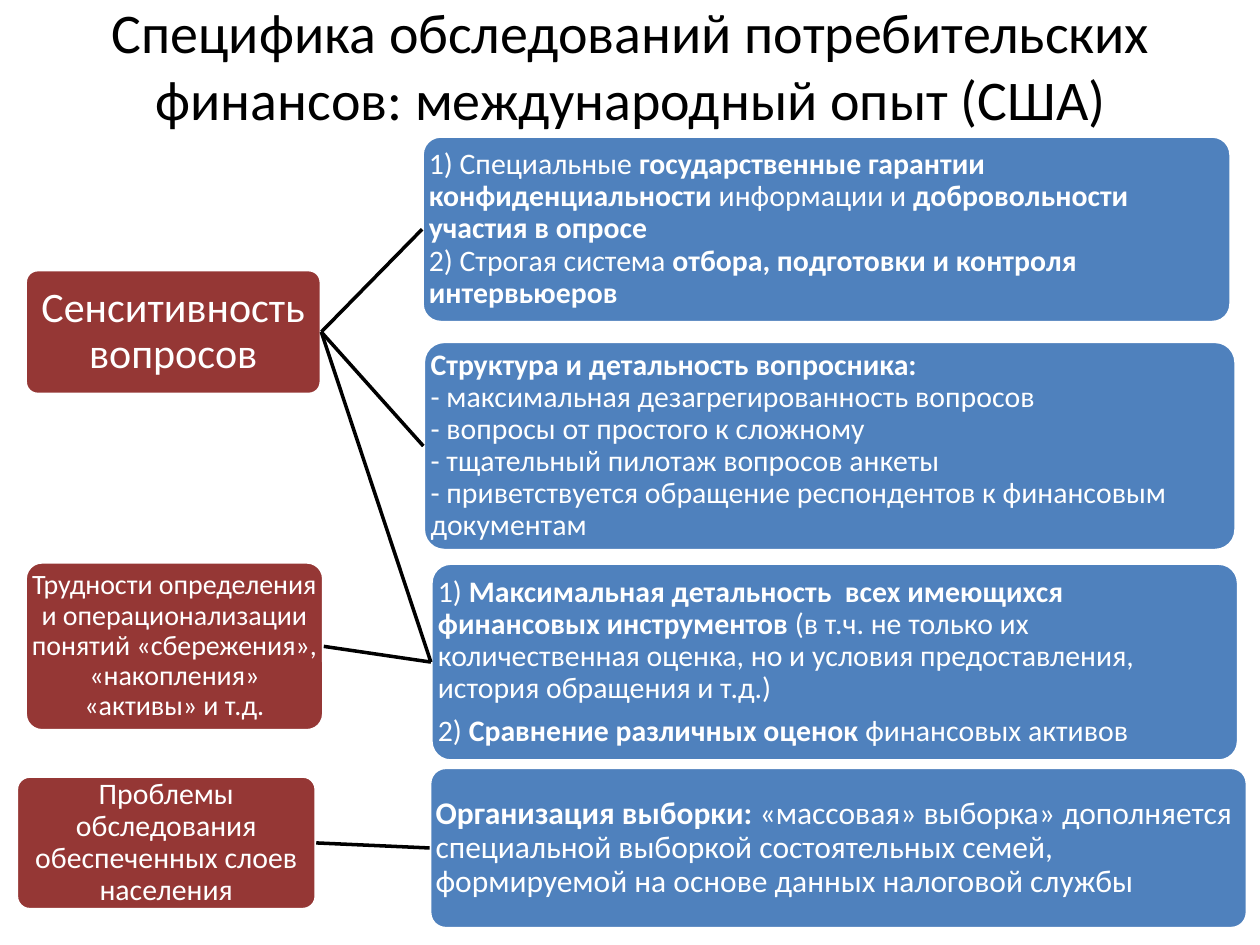
from dataclasses import dataclass

from lxml import etree
from pptx import Presentation
from pptx import util as u
from pptx.dml.color import RGBColor
from pptx.enum import shapes, text
from pptx.oxml import ns

BLACK = RGBColor(0x00, 0x00, 0x00)
WHITE = RGBColor(0xFF, 0xFF, 0xFF)
RED = RGBColor(0x95, 0x37, 0x35)
BLUE = RGBColor(0x4F, 0x81, 0xBD)
RIGHT_SIDE, LEFT_SIDE = 3, 1


@dataclass
class Box:
    left: float
    top: float
    width: float
    height: float
    paragraphs: list[str]
    size: int = 17
    gap: float = 0.35  # space after a paragraph, as a share of the text size
    inset: float = 0.01


ISSUES = [
    Box(0.2, 2.14, 2.35, 0.99, ["Сенситивность вопросов"], size=24, inset=0.02),
    Box(0.2, 4.46, 2.37, 1.34, [
        "Трудности определения и операционализации понятий «сбережения», "
        "«накопления» «активы» и т.д."], size=16),
    Box(0.13, 6.16, 2.38, 1.06, ["Проблемы обследования обеспеченных слоев населения"]),
]

# Text between double asterisks is bold.
SOLUTIONS = [
    Box(3.35, 1.08, 6.42, 1.48, [
        "1) Специальные **государственные гарантии конфиденциальности **"
        "информации и **добровольности участия в опросе**",
        "2) Строгая система **отбора, подготовки и контроля интервьюеров**"], gap=0),
    Box(3.36, 2.71, 6.45, 1.66, [
        "**Структура и детальность вопросника:**",
        "- максимальная дезагрегированность вопросов",
        "- вопросы от простого к сложному",
        "- тщательный пилотаж вопросов анкеты",
        "- приветствуется обращение респондентов к финансовым документам"], gap=0),
    Box(3.42, 4.47, 6.41, 1.57, [
        "1)** Максимальная детальность  всех имеющихся финансовых инструментов **"
        "(в т.ч. не только их количественная оценка, но и условия предоставления, "
        "история обращения и т.д.)",
        "2) **Сравнение различных оценок **финансовых активов"]),
    Box(3.41, 6.09, 6.49, 1.28, [
        "**Организация выборки: **«массовая» выборка» дополняется специальной выборкой "
        "состоятельных семей, формируемой на основе данных налоговой службы"], size=18),
]

# Index of the issue, index of the solution
LINKS = [(0, 0), (0, 1), (0, 2), (1, 2), (2, 3)]


def write_text(shape, paragraphs: list[str], *, size: int, color: RGBColor, align,
               inset: float, line_spacing: float = 1.0, gap: float = 0) -> None:
    frame = shape.text_frame
    frame.word_wrap = True
    frame.vertical_anchor = text.MSO_ANCHOR.MIDDLE
    frame.margin_left = frame.margin_right = u.Inches(inset)
    frame.margin_top = frame.margin_bottom = u.Inches(inset)
    for index, content in enumerate(paragraphs):
        paragraph = frame.add_paragraph() if index else frame.paragraphs[0]
        paragraph.alignment = align
        paragraph.line_spacing = line_spacing
        paragraph.space_after = u.Pt(gap * size)
        for part, words in enumerate(content.split("**")):
            if words:
                run = paragraph.add_run()
                run.text = words
                run.font.name = "Calibri"
                run.font.size = u.Pt(size)
                run.font.bold = part % 2 == 1
                run.font.color.rgb = color


def add_box(slide, box: Box, fill: RGBColor, align):
    shape = slide.shapes.add_shape(
        shapes.MSO_SHAPE.ROUNDED_RECTANGLE, u.Inches(box.left), u.Inches(box.top),
        u.Inches(box.width), u.Inches(box.height))
    shape.adjustments[0] = 0.1
    shape.shadow.inherit = False
    shape.fill.solid()
    shape.fill.fore_color.rgb = fill
    shape.line.color.rgb = WHITE
    shape.line.width = u.Pt(2)
    write_text(shape, box.paragraphs, size=box.size, color=WHITE, align=align,
               inset=box.inset, line_spacing=0.9, gap=box.gap)
    return shape


def add_link(slide, issue, solution) -> None:
    connector = slide.shapes.add_connector(shapes.MSO_CONNECTOR.STRAIGHT, 0, 0, 0, 0)
    connector.begin_connect(issue, RIGHT_SIDE)
    connector.end_connect(solution, LEFT_SIDE)
    connector.line.color.rgb = BLACK
    connector.line.width = u.Pt(2)
    etree.SubElement(connector._element.spPr, ns.qn("a:effectLst"))


def main() -> None:
    presentation = Presentation()
    presentation.slide_width = u.Inches(10)
    presentation.slide_height = u.Inches(7.5)
    slide = presentation.slides.add_slide(presentation.slide_layouts[6])

    title = slide.shapes.add_textbox(
        u.Inches(0.51), u.Inches(0.13), u.Inches(9), u.Inches(0.77))
    write_text(title, ["Специфика обследований потребительских финансов: "
                       "международный опыт (США)"],
               size=32, color=BLACK, align=text.PP_ALIGN.CENTER, inset=0.05)

    issues = [add_box(slide, box, RED, text.PP_ALIGN.CENTER) for box in ISSUES]
    solutions = [add_box(slide, box, BLUE, text.PP_ALIGN.LEFT) for box in SOLUTIONS]
    for issue, solution in LINKS:
        add_link(slide, issues[issue], solutions[solution])

    presentation.save("out.pptx")


if __name__ == "__main__":
    main()
